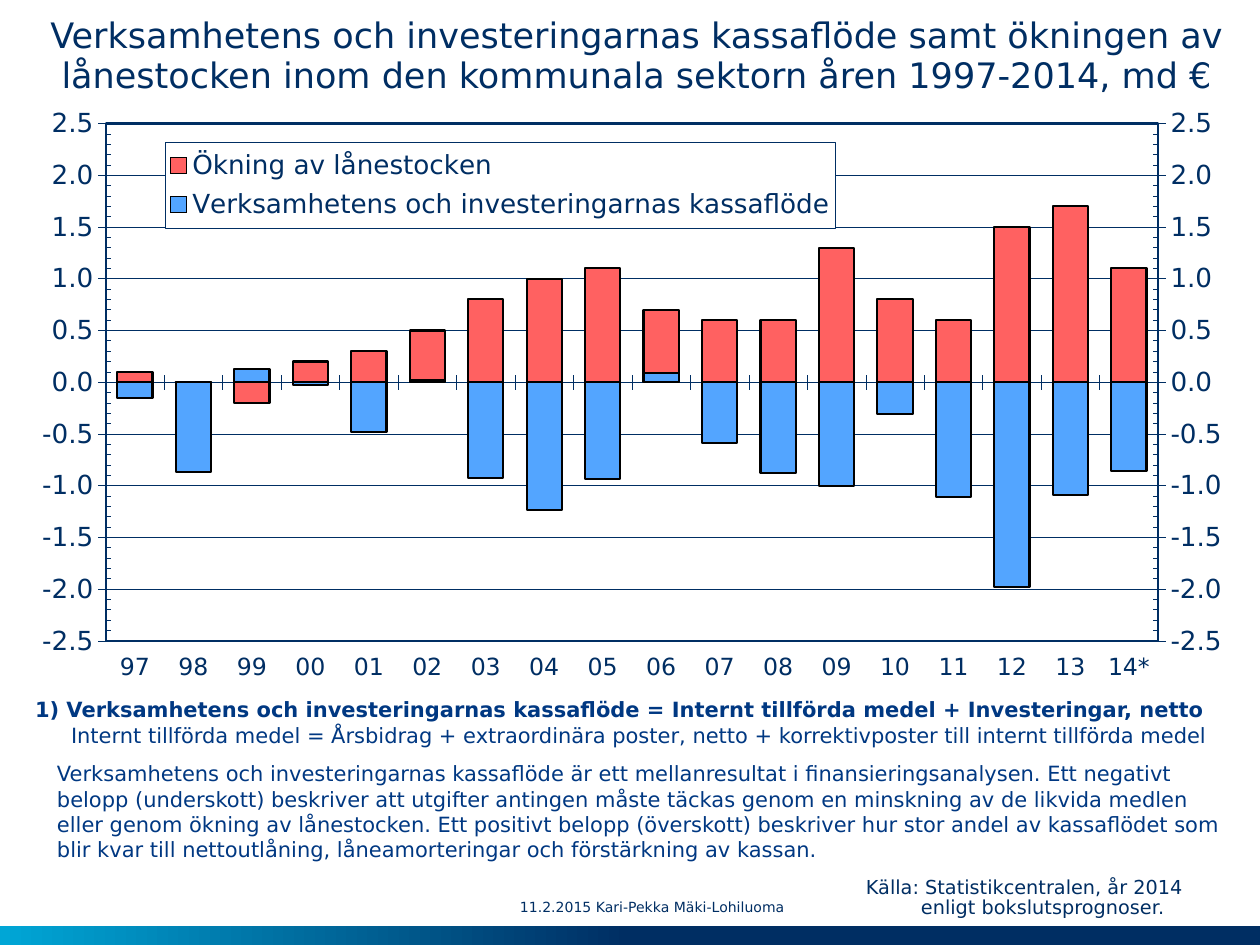
from copy import deepcopy
from dataclasses import dataclass
from typing import Any, Optional

from lxml.etree import _Element
from pptx import Presentation
from pptx.chart.axis import _BaseAxis
from pptx.chart.chart import Chart
from pptx.chart.data import CategoryChartData
from pptx.dml.color import RGBColor
from pptx.dml.line import LineFormat
from pptx.enum.chart import XL_CHART_TYPE, XL_LEGEND_POSITION, XL_TICK_LABEL_POSITION, XL_TICK_MARK
from pptx.enum.dml import MSO_LINE
from pptx.enum.shapes import MSO_SHAPE
from pptx.enum.text import MSO_ANCHOR, PP_ALIGN
from pptx.oxml import parse_xml
from pptx.oxml.ns import nsdecls, qn
from pptx.util import Emu, Inches, Pt

NAVY, BLUE, SKY = "002E63", "003882", "00A6D6"
FONT = "DejaVu Sans"
YEARS = "97 98 99 00 01 02 03 04 05 06 07 08 09 10 11 12 13 14*".split()
LOAN_GROWTH = (0.1, 0, -0.2, 0.2, 0.3, 0.5, 0.8, 1, 1.1,
               0.7, 0.6, 0.6, 1.3, 0.8, 0.6, 1.5, 1.7, 1.1)
CASH_FLOW = (-0.15, -0.87, 0.13, -0.03, -0.48, 0.02, -0.93, -1.24, -0.94,
             0.09, -0.59, -0.88, -1, -0.31, -1.11, -1.98, -1.09, -0.86)


@dataclass
class Line:
    text: str
    indent: int = 0
    bold: bool = False


@dataclass
class Note:
    box: tuple[int, int, int, int]
    lines: list[Line]
    size: int
    color: str = NAVY
    spacing: Optional[float] = None


NOTES = [
    Note((520, 898, 427, 20), [Line("11.2.2015 Kari-Pekka Mäki-Lohiluoma")], 8),
    Note((57, 761, 1176, 102), [Line(
        "Verksamhetens och investeringarnas kassaflöde är ett mellanresultat i "
        "finansieringsanalysen. Ett negativt belopp (underskott) beskriver att utgifter "
        "antingen måste täckas genom en minskning av de likvida medlen eller genom ökning "
        "av lånestocken. Ett positivt belopp (överskott) beskriver hur stor andel av "
        "kassaflödet som blir kvar till nettoutlåning, låneamorteringar och förstärkning "
        "av kassan.")], 12, BLUE),
    Note((35, 697, 1192, 52), [
        Line("1) Verksamhetens och investeringarnas kassaflöde = Internt tillförda medel "
             "+ Investeringar, netto", bold=True),
        Line("Internt tillförda medel = Årsbidrag + extraordinära poster, netto + "
             "korrektivposter till internt tillförda medel", indent=36)], 12, BLUE),
    Note((866, 879, 376, 40), [
        Line("Källa: Statistikcentralen, år 2014"),
        Line("enligt bokslutsprognoser.", indent=55)], 11, NAVY, 0.85),
]


def px(length: int) -> Emu:
    return Emu(round(length * 914400 / 126))


def rgb(code: str) -> RGBColor:
    return RGBColor.from_string(code)


def set_all(target: Any, values: dict[str, Any]) -> None:
    for name, value in values.items():
        setattr(target, name, value)


def style_font(font: Any, size: float, color: str = NAVY, bold: bool = False) -> None:
    set_all(font, {"name": FONT, "size": Pt(size), "bold": bold})
    font.color.rgb = rgb(color)


def style_line(line: LineFormat, color: str, width: float) -> None:
    line.color.rgb = rgb(color)
    line.width = Pt(width)


def clear_margins(frame: Any) -> None:
    set_all(frame, {"margin_left": 0, "margin_right": 0, "margin_top": 0,
                    "margin_bottom": 0, "word_wrap": True,
                    "vertical_anchor": MSO_ANCHOR.TOP})


def add_title(slide: Any) -> None:
    title = slide.shapes.title
    set_all(title, {"left": px(34), "top": px(17), "width": px(1206), "height": px(81)})
    clear_margins(title.text_frame)
    title.text_frame.text = ("Verksamhetens och investeringarnas kassaflöde samt ökningen av "
                             "lånestocken inom den kommunala sektorn åren 1997-2014, md €")
    heading = title.text_frame.paragraphs[0]
    set_all(heading, {"alignment": PP_ALIGN.CENTER, "line_spacing": 0.95})
    style_font(heading.runs[0].font, 20)


def add_note(slide: Any, note: Note) -> None:
    frame = slide.shapes.add_textbox(*map(px, note.box)).text_frame
    clear_margins(frame)
    for index, line in enumerate(note.lines):
        paragraph = frame.add_paragraph() if index else frame.paragraphs[0]
        if line.indent:
            paragraph._p.get_or_add_pPr().set("marL", str(px(line.indent)))
        paragraph.line_spacing = note.spacing
        run = paragraph.add_run()
        run.text = line.text
        style_font(run.font, note.size, note.color, line.bold)


def add_footer_band(slide: Any) -> None:
    band = slide.shapes.add_shape(MSO_SHAPE.RECTANGLE, 0, px(926), px(1260), px(19))
    band.shadow.inherit = False
    band.line.fill.background()
    band.fill.gradient()
    band.fill.gradient_angle = 180
    for stop, position, color in zip(band.fill.gradient_stops, (0.5, 1), (NAVY, SKY)):
        stop.position = position
        stop.color.rgb = rgb(color)


def layout_xml(x: float, y: float, w: float, h: float, inner: bool = False) -> _Element:
    target = '<c:layoutTarget val="inner"/>' if inner else ""
    sizes = "".join(f'<c:{key} val="{value}"/>' for key, value in zip("xywh", (x, y, w, h)))
    return parse_xml(f'<c:layout {nsdecls("c")}><c:manualLayout>{target}<c:xMode val="edge"/>'
                     f'<c:yMode val="edge"/>{sizes}</c:manualLayout></c:layout>')


def frame_xml(width: float, fill: str) -> _Element:
    return parse_xml(f'<c:spPr {nsdecls("c", "a")}>{fill}<a:ln w="{Pt(width)}"><a:solidFill>'
                     f'<a:srgbClr val="{NAVY}"/></a:solidFill></a:ln></c:spPr>')


def style_axis(axis: _BaseAxis, size: float) -> None:
    axis.major_tick_mark = XL_TICK_MARK.CROSS
    axis.tick_label_position = XL_TICK_LABEL_POSITION.LOW
    style_font(axis.tick_labels.font, size)
    style_line(axis.format.line, NAVY, 0.3)


def move_last_series_to_right_axis(plot_area: _Element) -> None:
    bars, categories, values = (plot_area.find(qn(f"c:{tag}"))
                                for tag in ("barChart", "catAx", "valAx"))
    right_bars, right_categories, right_values = map(deepcopy, (bars, categories, values))
    bars.remove(bars.findall(qn("c:ser"))[-1])
    right_bars.remove(right_bars.find(qn("c:ser")))
    for axis_id, new_id in zip(right_bars.findall(qn("c:axId")), ("501", "502")):
        axis_id.set("val", new_id)
    right_values.remove(right_values.find(qn("c:majorGridlines")))
    changes = (
        (right_categories, {"axId": "501", "crossAx": "502", "delete": "1"}),
        (right_values, {"axId": "502", "crossAx": "501", "axPos": "r", "crosses": "max",
                        "tickLblPos": "nextTo"}),
    )
    for axis, settings in changes:
        for tag, value in settings.items():
            axis.find(qn(f"c:{tag}")).set("val", value)
    bars.addnext(right_bars)
    values.addnext(right_values)
    right_values.addnext(right_categories)


def add_legend(chart: Chart) -> None:
    chart.has_legend = True
    set_all(chart.legend, {"position": XL_LEGEND_POSITION.RIGHT, "include_in_layout": False})
    style_font(chart.legend.font, 15)
    legend = chart.legend._element
    for old in legend.findall(qn("c:layout")):
        legend.remove(old)
    legend.find(qn("c:legendPos")).addnext(layout_xml(0.11, 0.06, 0.56, 0.14))
    white = '<a:solidFill><a:srgbClr val="FFFFFF"/></a:solidFill>'
    legend.find(qn("c:overlay")).addnext(frame_xml(0.3, white))


def add_cash_flow_chart(slide: Any) -> None:
    data = CategoryChartData(number_format="0.0")
    data.categories = YEARS
    data.add_series("Ökning av lånestocken", LOAN_GROWTH)
    data.add_series("Verksamhetens och investeringarnas kassaflöde", CASH_FLOW)
    chart = slide.shapes.add_chart(XL_CHART_TYPE.COLUMN_CLUSTERED, px(34), px(105),
                                   px(1196), px(616), data).chart
    chart.has_title = False
    style_font(chart.font, 15)
    set_all(chart.plots[0], {"gap_width": 66, "vary_by_categories": False})
    for series, color in zip(chart.plots[0].series, ("FF6161", "53A5FF")):
        series.invert_if_negative = False
        series.format.fill.solid()
        series.format.fill.fore_color.rgb = rgb(color)
        style_line(series.format.line, "000000", 1.25)
    style_axis(chart.category_axis, 13.5)
    style_axis(chart.value_axis, 15)
    set_all(chart.value_axis, {"minimum_scale": -2.5, "maximum_scale": 2.5, "major_unit": 0.5,
                               "minor_unit": 0.1, "minor_tick_mark": XL_TICK_MARK.INSIDE})
    set_all(chart.value_axis.tick_labels, {"number_format": "0.0",
                                           "number_format_is_linked": False})
    gridline = chart.value_axis.major_gridlines.format.line
    style_line(gridline, NAVY, 0.25)
    gridline.dash_style = MSO_LINE.ROUND_DOT
    add_legend(chart)
    plot_area = chart._chartSpace.chart.plotArea
    move_last_series_to_right_axis(plot_area)
    for old in plot_area.findall(qn("c:layout")):
        plot_area.remove(old)
    plot_area.insert(0, layout_xml(0.06, 0.03, 0.88, 0.84, inner=True))
    plot_area.append(frame_xml(1.25, "<a:noFill/>"))


def main() -> None:
    deck = Presentation()
    set_all(deck, {"slide_width": Inches(10), "slide_height": Inches(7.5)})
    slide = deck.slides.add_slide(deck.slide_layouts[5])
    add_footer_band(slide)
    add_cash_flow_chart(slide)
    add_title(slide)
    for note in NOTES:
        add_note(slide, note)
    deck.save("out.pptx")


if __name__ == "__main__":
    main()
